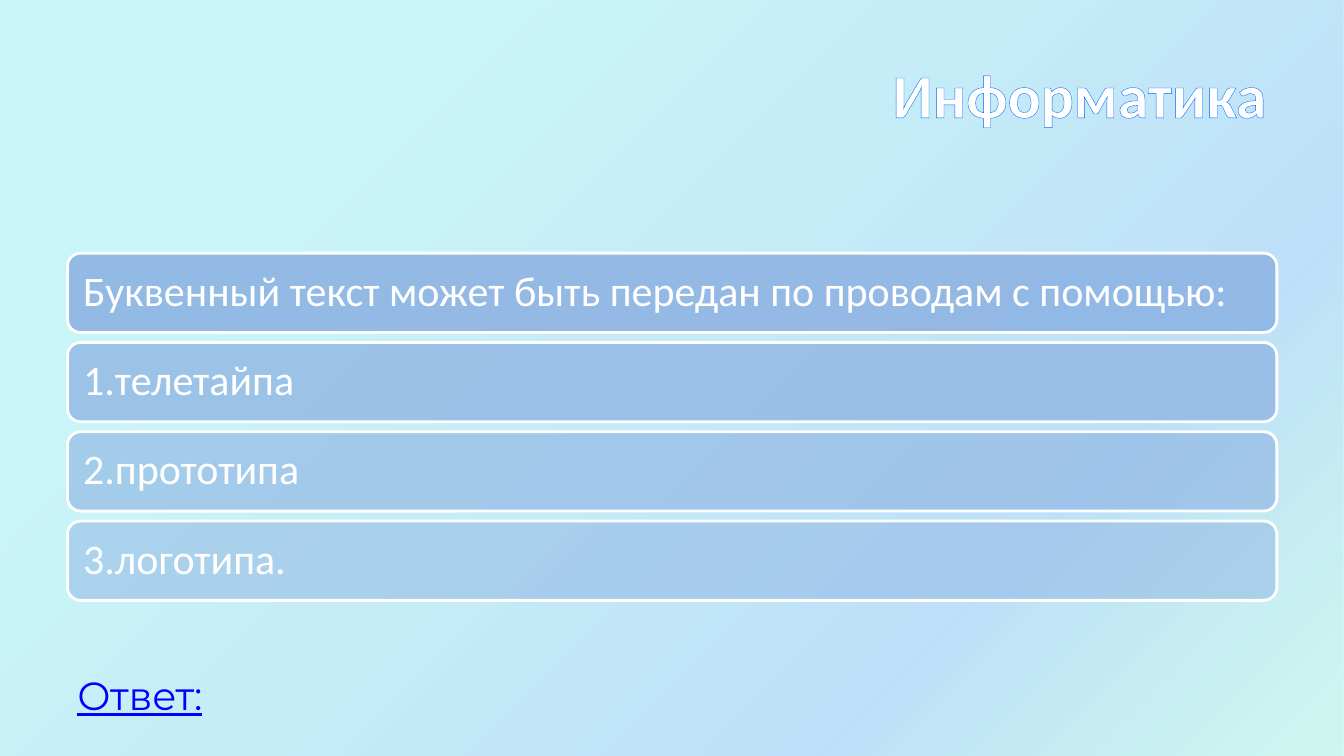
import pptx
import pptx.util
import pptx.dml.color
import pptx.enum.shapes
import pptx.enum.text
import pptx.oxml
import pptx.oxml.ns
from pptx.util import Cm, Pt

TITLE = "Информатика"
ROWS = [  # text, opacity in percent
    ("Буквенный текст может быть передан по проводам с помощью:", 90),
    ("1.телетайпа", 77),
    ("2.прототипа", 63),
    ("3.логотипа.", 50),
]
ANSWER = "Ответ:"
GRADIENT = [  # position, colour, opacity in percent
    (25, "21D6E0", 23),
    (75, "0087E6", 25),
    (100, "03D4A8", 18),
]
WIDTH, HEIGHT = 33.87, 19.05
LEFT, ROW_WIDTH = 1.7, 30.48
ROW_TOP, ROW_HEIGHT, ROW_PITCH = 6.38, 2.0, 2.25
NS = pptx.oxml.ns.nsdecls("a")


def rgb(value):
    return pptx.dml.color.RGBColor.from_string(value)


def set_font(p, name, size, color):
    p.font.name = name
    p.font.size = Pt(size)
    p.font.color.rgb = rgb(color)


def add_box(s, kind, left, top, width, height):
    sp = s.shapes.add_shape(kind, Cm(left), Cm(top), Cm(width), Cm(height))
    sp.shadow.inherit = False
    return sp


def add_background(s):
    sp = add_box(s, pptx.enum.shapes.MSO_SHAPE.RECTANGLE, 0, 0, WIDTH, HEIGHT)
    sp.line.fill.background()
    stops = "".join(
        f'<a:gs pos="{pos * 1000}"><a:srgbClr val="{color}">'
        f'<a:alpha val="{alpha * 1000}"/></a:srgbClr></a:gs>'
        for pos, color, alpha in GRADIENT)
    fill = pptx.oxml.parse_xml(
        f'<a:gradFill {NS} rotWithShape="1"><a:gsLst>{stops}</a:gsLst>'
        '<a:lin ang="2700000" scaled="0"/></a:gradFill>')
    sp._element.spPr.find(pptx.oxml.ns.qn("a:prstGeom")).addnext(fill)
    s.shapes._spTree.insert(2, sp._element)  # behind the title


def add_title(s):
    title = s.shapes.title
    title.left, title.top = Cm(LEFT), Cm(0.76)
    title.width, title.height = Cm(ROW_WIDTH), Cm(3.18)
    tf = title.text_frame
    tf.text = TITLE
    tf.vertical_anchor = pptx.enum.text.MSO_ANCHOR.MIDDLE
    p = tf.paragraphs[0]
    p.alignment = pptx.enum.text.PP_ALIGN.RIGHT
    set_font(p, "Calibri", 44, "FFFFFF")
    p.font.bold = True
    outline = pptx.oxml.parse_xml(
        f'<a:ln {NS} w="{Pt(1.45)}"><a:solidFill>'
        '<a:srgbClr val="0066FF"/></a:solidFill></a:ln>')
    p.runs[0]._r.get_or_add_rPr().insert(0, outline)


def add_row(s, index, text, opacity):
    sp = add_box(s, pptx.enum.shapes.MSO_SHAPE.ROUNDED_RECTANGLE,
                 LEFT, ROW_TOP + index * ROW_PITCH, ROW_WIDTH, ROW_HEIGHT)
    sp.fill.solid()
    sp.fill.fore_color.rgb = rgb("8EB4E3")
    color = sp._element.spPr.find(".//" + pptx.oxml.ns.qn("a:srgbClr"))
    color.append(pptx.oxml.parse_xml(
        f'<a:alpha {NS} val="{opacity * 1000}"/>'))
    sp.line.color.rgb = rgb("FFFFFF")
    sp.line.width = Pt(2)
    tf = sp.text_frame
    tf.text = text
    tf.word_wrap = True
    tf.vertical_anchor = pptx.enum.text.MSO_ANCHOR.MIDDLE
    # The rounded corners already inset the text by about 0.1 cm
    tf.margin_left = tf.margin_right = Cm(0.3)
    p = tf.paragraphs[0]
    p.alignment = pptx.enum.text.PP_ALIGN.LEFT
    p.line_spacing = 0.9
    set_font(p, "Calibri", 30, "FFFFFF")


def add_answer(s):
    sp = s.shapes.add_textbox(Cm(LEFT), Cm(16.79), Cm(3.96), Cm(1.45))
    tf = sp.text_frame
    tf.text = ANSWER
    tf.word_wrap = False
    tf.auto_size = pptx.enum.text.MSO_AUTO_SIZE.SHAPE_TO_FIT_TEXT
    p = tf.paragraphs[0]
    set_font(p, "Montserrat", 28, "0000FF")
    p.font.underline = True


def main():
    prs = pptx.Presentation()
    prs.slide_width, prs.slide_height = Cm(WIDTH), Cm(HEIGHT)
    s = prs.slides.add_slide(prs.slide_layouts[5])
    add_background(s)
    add_title(s)
    for index, (text, opacity) in enumerate(ROWS):
        add_row(s, index, text, opacity)
    add_answer(s)
    prs.save("out.pptx")


if __name__ == "__main__":
    main()
